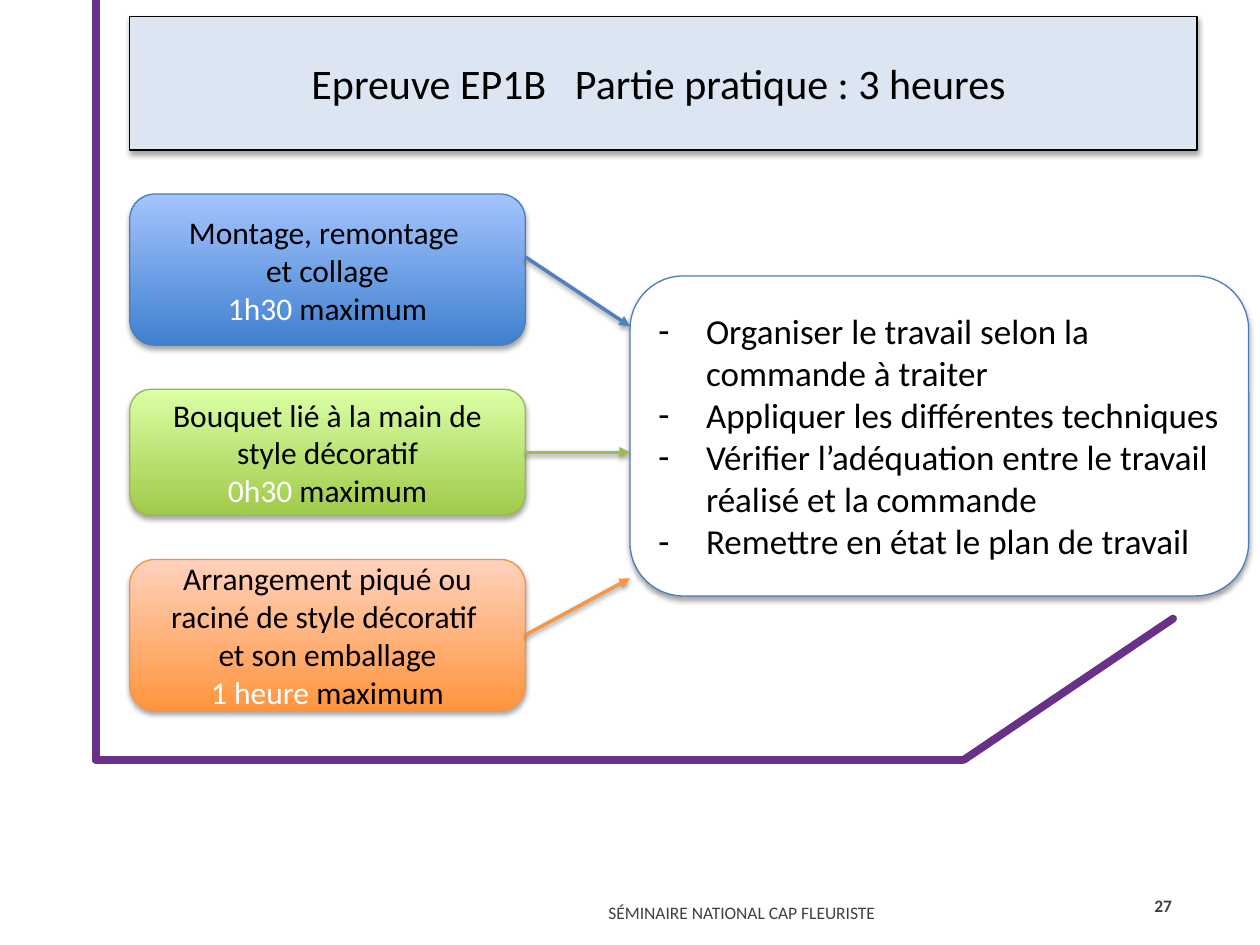
import pptx
import pptx.util
import pptx.dml.color
import pptx.enum.shapes
import pptx.enum.text
import pptx.oxml.ns
from lxml import etree

Inches = pptx.util.Inches
Pt = pptx.util.Pt
RGB = pptx.dml.color.RGBColor
KIND = pptx.enum.shapes.MSO_SHAPE
ANCHOR = pptx.enum.text.MSO_ANCHOR
ALIGN = pptx.enum.text.PP_ALIGN
qn = pptx.oxml.ns.qn

BLACK = RGB(0x00, 0x00, 0x00)
WHITE = RGB(0xFF, 0xFF, 0xFF)
GREY = RGB(0x40, 0x40, 0x40)
PURPLE = RGB(0x68, 0x30, 0x86)
PALE = RGB(0xDC, 0xE6, 0xF2)
BLUE = RGB(0x4B, 0x7E, 0xBC)


def shade(item, alpha=35, dist=1.8):
    """Give a shape or connector a soft black shadow below it."""
    effect = etree.SubElement(item.element.spPr, qn("a:effectLst"))
    outer = etree.SubElement(effect, qn("a:outerShdw"), blurRad=str(Pt(3.1)),
                             dist=str(Pt(dist)), dir="5400000", rotWithShape="0")
    color = etree.SubElement(outer, qn("a:srgbClr"), val="000000")
    etree.SubElement(color, qn("a:alpha"), val=str(alpha * 1000))


def style(para, size, color, bold=False):
    para.font.name = "Calibri"
    para.font.size = Pt(size)
    para.font.color.rgb = color
    para.font.bold = bold


prs = pptx.Presentation()
prs.slide_width, prs.slide_height = Inches(10), Inches(7.5)
slide = prs.slides.add_slide(prs.slide_layouts[1])
shapes = slide.shapes
title, body = slide.placeholders

# Purple frame
for x1, y1, x2, y2 in [(0.76, 6.03, 7.64, 6.03), (7.65, 6.03, 9.31, 4.91),
                       (0.76, 6.03, 0.76, 0)]:
    edge = shapes.add_connector(pptx.enum.shapes.MSO_CONNECTOR.STRAIGHT,
                                Inches(x1), Inches(y1), Inches(x2), Inches(y2))
    edge.line.color.rgb = PURPLE
    edge.line.width = Pt(4.5)
    edge.element.spPr.find(qn("a:ln")).set("cap", "rnd")
    etree.SubElement(edge.element.spPr, qn("a:effectLst"))

# Footer and slide number
for text, left, top, width, bold, align, anchor in [
        ("SÉMINAIRE NATIONAL CAP FLEURISTE", 4.73, 6.93, 3.75, False,
         ALIGN.LEFT, ANCHOR.BOTTOM),
        ("27", 8.96, 6.99, 0.44, True, ALIGN.RIGHT, ANCHOR.MIDDLE)]:
    note = shapes.add_textbox(Inches(left), Inches(top), Inches(width), Inches(0.4))
    frame = note.text_frame
    frame.word_wrap = True
    frame.vertical_anchor = anchor
    frame.margin_top = frame.margin_bottom = 0
    para = frame.paragraphs[0]
    para.text = text
    para.alignment = align
    style(para, 10, GREY, bold)

# Title and list panels
for panel, left, top, width, height, fill, line in [
        (title, 1.03, 0.13, 8.47, 1.06, PALE, BLACK),
        (body, 5, 2.19, 4.91, 2.54, WHITE, BLUE)]:
    panel.left, panel.top = Inches(left), Inches(top)
    panel.width, panel.height = Inches(width), Inches(height)
    panel.fill.solid()
    panel.fill.fore_color.rgb = fill
    panel.line.color.rgb = line
    panel.line.width = Pt(0.75)
    panel.text_frame.auto_size = pptx.enum.text.MSO_AUTO_SIZE.NONE
    panel.text_frame.vertical_anchor = ANCHOR.MIDDLE
    shade(panel)

# Title text, with a widened space between its halves
para = title.text_frame.paragraphs[0]
for text in ["Epreuve EP1B", " ", "Partie pratique : 3 heures "]:
    run = para.add_run()
    run.text = text
    if text == " ":
        run.font.size = Pt(24)
        run._r.get_or_add_rPr().set("spc", "1090")
para.alignment = ALIGN.CENTER
style(para, 24, BLACK)

# Rounded outline and dashed list
geom = etree.Element(qn("a:prstGeom"), prst="roundRect")
etree.SubElement(geom, qn("a:avLst"))
body.element.spPr.insert(1, geom)
tasks = ["Organiser le travail selon la commande à traiter",
         "Appliquer les différentes techniques",
         "Vérifier l’adéquation entre le travail réalisé et la commande",
         "Remettre en état le plan de travail"]
body.text_frame.text = "\n".join(tasks)
for para in body.text_frame.paragraphs:
    para.space_before = Pt(0)
    props = para._p.get_or_add_pPr()
    props.set("marL", str(Inches(0.38)))
    props.set("indent", str(Inches(-0.38)))
    etree.SubElement(props, qn("a:buChar"), char="-")
    style(para, 20, BLACK)

# Exam parts, each with an arrow to the list
parts = [
    (1.54, 1.2, 2.59, "3F80CE", "A4C4FF", "4B7EBC", "4F81BD",
     ["Montage, remontage ", "et collage"], "1h30", " maximum"),
    (3.09, 1, 3.59, "A0CA4A", "DAFFA5", "98B955", "9BBB59",
     ["Bouquet lié à la main de style décoratif"], "0h30", " maximum"),
    (4.44, 1.2, 4.59, "FF953E", "FFD2BD", "F69240", "F79646",
     ["Arrangement piqué ou raciné de style décoratif ", "et son emballage"],
     "1 heure ", "maximum"),
]
for top, height, end, dark, light, rim, ink, lines, time, rest in parts:
    box = shapes.add_shape(KIND.ROUNDED_RECTANGLE, Inches(1.03), Inches(top),
                           Inches(3.14), Inches(height))
    box.fill.gradient()
    box.fill.gradient_angle = 90
    for stop, tone in zip(box.fill.gradient_stops, [dark, light]):
        stop.color.rgb = RGB.from_string(tone)
    box.line.color.rgb = RGB.from_string(rim)
    box.line.width = Pt(0.75)
    shade(box)
    frame = box.text_frame
    frame.text = "\n".join(lines)
    last = frame.add_paragraph()
    for text, color in [(time, WHITE), (rest, BLACK)]:
        run = last.add_run()
        run.text = text
        run.font.color.rgb = color
    for para in frame.paragraphs:
        para.alignment = ALIGN.CENTER
        style(para, 18, BLACK)

    arrow = shapes.add_connector(pptx.enum.shapes.MSO_CONNECTOR.STRAIGHT,
                                 Inches(4.17), Inches(top + height / 2 - (0.1 if top < 2 else 0)),
                                 Inches(5), Inches(end))
    arrow.line.color.rgb = RGB.from_string(ink)
    arrow.line.width = Pt(2)
    etree.SubElement(arrow.element.spPr.find(qn("a:ln")), qn("a:tailEnd"),
                     type="triangle")
    shade(arrow, 38, 1.6)

prs.save("out.pptx")
